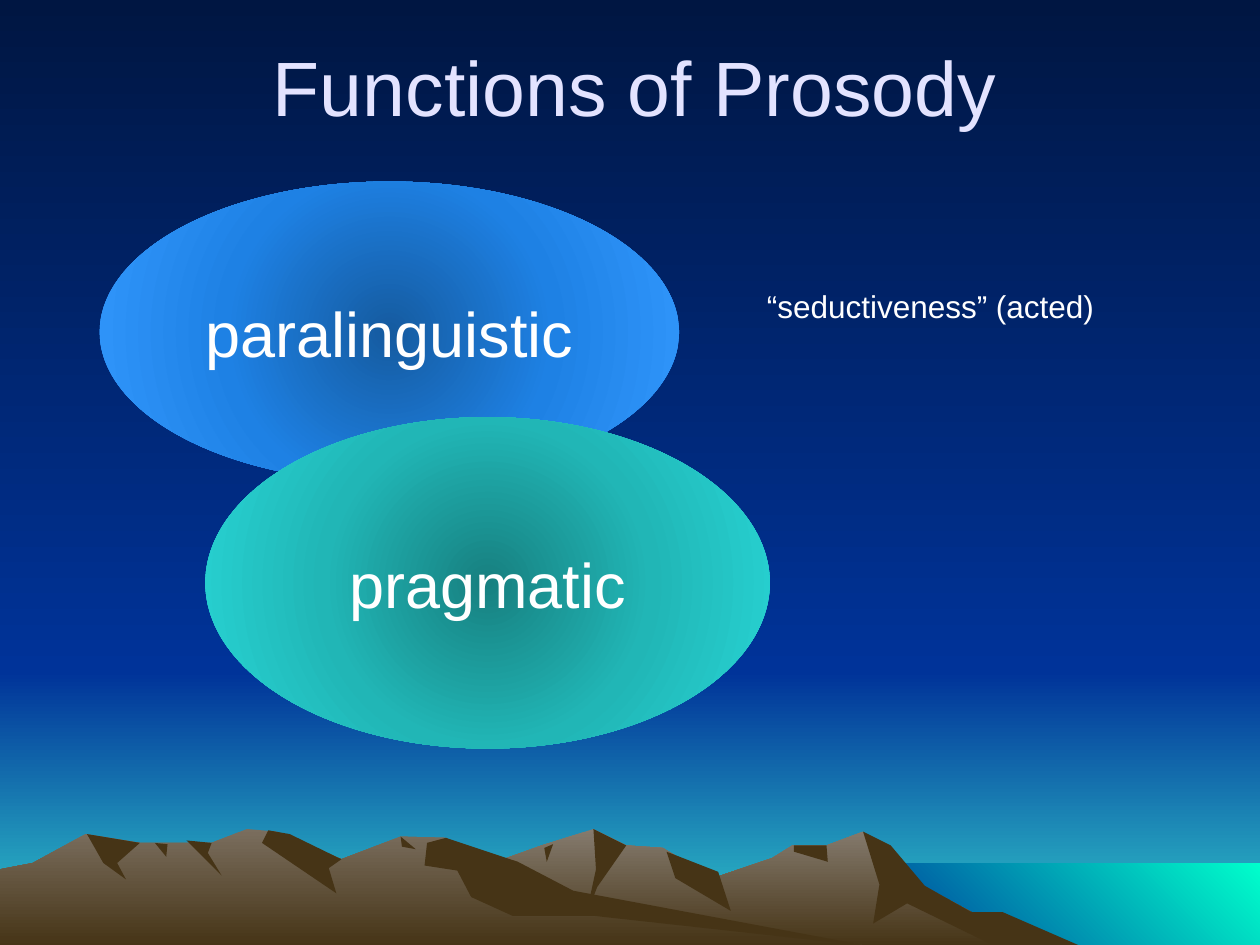
from lxml import etree
from pptx import Presentation
from pptx import util as u
from pptx.dml.color import RGBColor
from pptx.enum import shapes, text
from pptx.oxml.ns import qn

FONT = "Arial"
DARK = "463416"
NIGHT = ["001642", "003399"]
DUSK = ["003399", "33CCCC"]
SEA = ["003399", "00FFCC"]
NEAR_ROCK = ["857B6E", DARK]
FAR_ROCK = ["7A6E5E", DARK]
BLUE = ["155BA0", "1E81E4", "3399FF"]
TEAL = ["178080", "21B6B6", "28D7D7"]

NEAR_RANGE = [(258, 751), (355, 698), (430, 671), (471, 658), (497, 671),
              (526, 673), (566, 697), (613, 681), (629, 671), (656, 671),
              (685, 660), (723, 698), (821, 751)]
NEAR_SHADOWS = [
    [(685, 660), (707, 671), (734, 703), (771, 724), (796, 724), (858, 751),
     (792, 752), (720, 717), (693, 733), (698, 702)],
    [(471, 658), (497, 671), (474, 704), (465, 727), (473, 690)],
    [(529, 676), (570, 692), (580, 723), (536, 697)],
    [(630, 671), (656, 671), (657, 684), (630, 676)],
    [(432, 673), (439, 670), (434, 684)],
]
FAR_RANGE = [(0, 751), (0, 690), (26, 685), (68, 662), (111, 669), (168, 669),
             (196, 658), (219, 660), (271, 682), (318, 664), (354, 665),
             (432, 712), (690, 751)]
FAR_SHADOWS = [
    [(213, 659), (230, 662), (271, 682), (261, 689), (267, 709), (208, 669)],
    [(339, 669), (354, 665), (411, 684), (455, 707), (690, 751), (472, 727),
     (407, 727), (374, 712), (363, 691), (337, 687)],
    [(318, 664), (330, 674), (319, 672)],
    [(148, 667), (168, 669), (165, 677), (176, 695)],
    [(123, 669), (133, 670), (132, 680)],
    [(69, 662), (111, 669), (93, 685), (100, 698), (82, 685)],
]


def rgb(code):
    return RGBColor.from_string(code)


def gradient(sp, colors, angle=None):
    sp.fill.gradient()
    grad = sp._element.spPr.find(qn("a:gradFill"))
    for child in list(grad):
        grad.remove(child)
    stop_list = etree.SubElement(grad, qn("a:gsLst"))
    step = 100000 // (len(colors) - 1)
    for i, code in enumerate(colors):
        stop = etree.SubElement(stop_list, qn("a:gs"), pos=str(i * step))
        etree.SubElement(stop, qn("a:srgbClr"), val=code)
    if angle is None:
        circle = etree.SubElement(grad, qn("a:path"), {"path": "circle"})
        etree.SubElement(circle, qn("a:fillToRect"),
                         dict.fromkeys("ltrb", "50000"))
    else:
        etree.SubElement(grad, qn("a:lin"), ang=str(angle * 60000), scaled="0")


def paint(sp, fill, angle=None):
    sp.shadow.inherit = False
    sp.line.fill.background()
    if isinstance(fill, str):
        sp.fill.solid()
        sp.fill.fore_color.rgb = rgb(fill)
    else:
        gradient(sp, fill, angle)


def write(sp, words, size, color, align=text.PP_ALIGN.CENTER):
    tf = sp.text_frame
    tf.word_wrap = True
    tf.vertical_anchor = text.MSO_ANCHOR.MIDDLE
    p = tf.paragraphs[0]
    p.alignment = align
    r = p.add_run()
    r.text = words
    r.font.name = FONT
    r.font.size = u.Pt(size)
    r.font.color.rgb = rgb(color)


def shape(s, kind, box, fill, angle=None):
    sp = s.shapes.add_shape(kind, *map(u.Cm, box))
    paint(sp, fill, angle)
    return sp


def outline(s, fill, points):
    builder = s.shapes.build_freeform(*points[0], scale=u.Cm(2.54) / 100)
    builder.add_line_segments(points[1:], close=True)
    paint(builder.convert_to_shape(), fill, 90)


def mountains(s, rock, ridge, shadows):
    outline(s, rock, ridge)
    for points in shadows:
        outline(s, DARK, points)


def label(s, box, words, size, color, align=text.PP_ALIGN.CENTER):
    sp = s.shapes.add_textbox(*map(u.Cm, box))
    write(sp, words, size, color, align)


def main():
    prs = Presentation()
    prs.slide_width, prs.slide_height = u.Cm(25.4), u.Cm(19.05)
    s = prs.slides.add_slide(prs.slide_layouts[6])

    rectangle = shapes.MSO_SHAPE.RECTANGLE
    shape(s, rectangle, (0, 13.54, 25.4, 5.51), DUSK, 90)
    shape(s, rectangle, (0, 0, 25.4, 13.54), NIGHT, 90)
    shape(s, rectangle, (17.35, 17.4, 8.05, 1.7), SEA, 315)
    mountains(s, NEAR_ROCK, NEAR_RANGE, NEAR_SHADOWS)
    mountains(s, FAR_ROCK, FAR_RANGE, FAR_SHADOWS)

    label(s, (1.37, 0.13, 22.86, 3.18), "Functions of Prosody", 44, "E3E3FF")
    for words, box, fill in (
        ("paralinguistic", (2.01, 3.66, 11.68, 6.07), BLUE),
        ("pragmatic", (4.14, 8.41, 11.38, 6.68), TEAL),
    ):
        sp = shape(s, shapes.MSO_SHAPE.OVAL, box, fill)
        write(sp, words, 36, "FFFFFF")
    label(s, (15.21, 5.66, 8.18, 1.02), "“seductiveness” (acted)", 18,
          "FFFFFF", text.PP_ALIGN.LEFT)
    prs.save("out.pptx")


if __name__ == "__main__":
    main()
